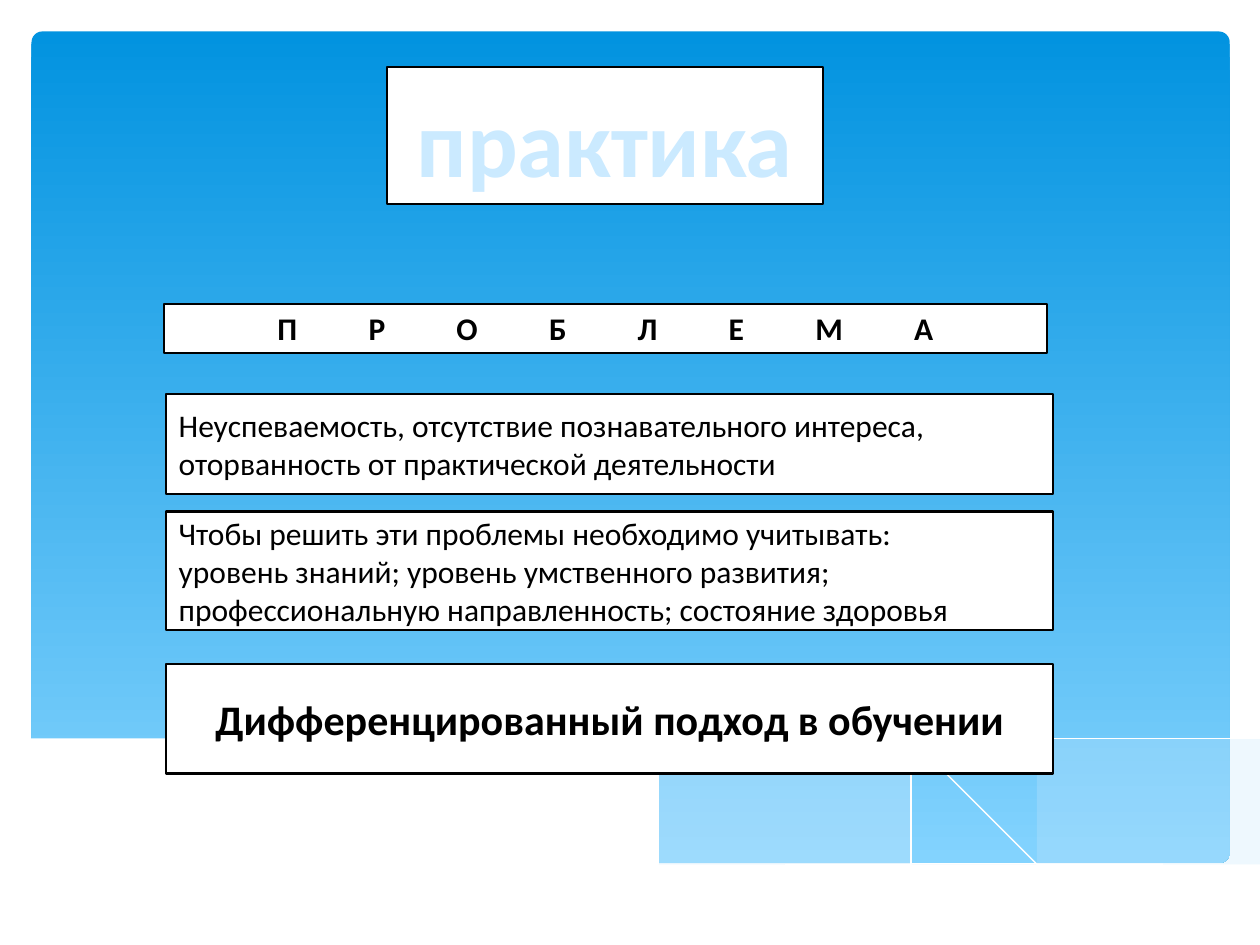
from dataclasses import dataclass

from pptx import Presentation
from pptx.dml.color import RGBColor
from pptx.enum import shapes, text
from pptx.oxml import xmlchemy
from pptx.oxml.ns import qn
from pptx.util import Inches, Pt
from lxml import etree


@dataclass(frozen=True)
class Theme:
    font: str = "Calibri"
    paper: str = "FFFFFF"
    ink: str = "000000"
    title: str = "CBEAFF"
    sky_top: str = "0293E0"
    sky_bottom: str = "83D3FE"
    swell: str = "C6E7FC"
    title_size: int = 54
    heading_size: int = 24
    body_size: int = 18
    border: float = 1.25


THEME = Theme()
CENTER = text.PP_ALIGN.CENTER
LEFT = text.PP_ALIGN.LEFT

# Knots of the curves, in inches from the corner of the wave band
RIGHT_SWELL = [
    [(9.53, .15), (8.99, .25), (8.39, .39), (7.57, .58), (6.84, .73), (6.39, .81)],
    [(6.39, .81), (6.96, .88), (7.47, .93), (7.92, .94), (8.41, .91), (8.84, .85),
     (9.14, .77), (9.54, .63)],
]
LONG_SWELL = [
    [(8.71, .89), (8.15, .81), (7.53, .70), (6.84, .56), (6.07, .38), (5.32, .21),
     (4.66, .10), (3.97, .03), (3.39, .01), (2.64, .07)],
    [(2.64, .07), (3.40, .18), (4.27, .38), (5.07, .56), (5.79, .71), (6.43, .82),
     (7.00, .90), (7.51, .93), (7.96, .94), (8.36, .93), (8.71, .89)],
]
FALLING_LINE = [(2.87, .11), (3.21, .06), (3.79, .03), (4.46, .04), (5.10, .10),
                (5.86, .20), (6.73, .35), (7.73, .57), (8.85, .87)]
RISING_LINE = [(5.91, .73), (6.50, .57), (7.26, .39), (8.14, .20), (8.74, .10),
               (9.16, .04), (9.53, .01)]
FOREGROUND = [
    [(9.54, .62), (9.17, .75), (8.76, .85), (8.27, .91), (7.86, .93), (7.21, .90),
     (6.45, .81), (5.56, .65), (4.80, .49), (3.95, .29), (3.17, .13), (2.48, .04),
     (1.70, 0), (1.09, .02), (.62, .09), (.29, .17), (0, .29)],
    [(0, 1.46), (9.54, 1.46)],
]


def rgb(value):
    return RGBColor.from_string(value)


def smooth(knots, steps=5):
    """Points of a Catmull-Rom curve through the knots."""
    padded = [knots[0], *knots, knots[-1]]
    points = [knots[0]]
    for a, b, c, d in zip(padded, padded[1:], padded[2:], padded[3:]):
        for step in range(1, steps + 1):
            t = step / steps
            points.append(tuple(
                (2 * q + (r - p) * t + (2 * p - 5 * q + 4 * r - s) * t ** 2
                 + (3 * q - p - 3 * r + s) * t ** 3) / 2
                for p, q, r, s in zip(a, b, c, d)))
    return points


def add_curve(slide, box, curves, closed=True):
    points = [point for knots in curves for point in smooth(knots)]
    builder = slide.shapes.build_freeform(*points[0], scale=Inches(1))
    builder.add_line_segments(points[1:], close=closed)
    curve = builder.convert_to_shape(Inches(box[0]), Inches(box[1]))
    curve.shadow.inherit = False
    return curve


def add_area(slide, box, curves, color, opacity=100):
    area = add_curve(slide, box, curves)
    area.fill.solid()
    area.fill.fore_color.rgb = rgb(color)
    area.line.fill.background()
    if opacity < 100:
        color_node = area.fill._xPr.find(qn("a:solidFill"))[0]
        etree.SubElement(color_node, qn("a:alpha"), val=str(opacity * 1000))


def add_sky(slide, box):
    sky = slide.shapes.add_shape(
        shapes.MSO_SHAPE.ROUNDED_RECTANGLE, *map(Inches, box))
    sky.adjustments[0] = 0.013
    sky.shadow.inherit = False
    sky.line.fill.background()
    sky.fill.gradient()
    sky.fill.gradient_angle = 270
    stops = zip(sky.fill.gradient_stops, (THEME.sky_top, THEME.sky_bottom))
    for position, (stop, color) in enumerate(stops):
        stop.position = position
        stop.color.rgb = rgb(color)


def add_waves(slide, box):
    add_area(slide, box, RIGHT_SWELL, THEME.swell, 29)
    add_area(slide, box, LONG_SWELL, THEME.swell, 40)
    for knots in (FALLING_LINE, RISING_LINE):
        thread = add_curve(slide, box, [knots], closed=False)
        thread.fill.background()
        thread.line.color.rgb = rgb(THEME.paper)
        thread.line.width = Pt(0)
    add_area(slide, box, FOREGROUND, THEME.paper)


def add_run(paragraph, wording, size, color, bold, spacing=0):
    run = paragraph.add_run()
    run.text = wording
    formats = {"name": THEME.font, "size": Pt(size), "bold": bold}
    for name, value in formats.items():
        setattr(run.font, name, value)
    run.font.color.rgb = rgb(color)
    if spacing:
        run._r.get_or_add_rPr().set("spc", str(round(spacing * 100)))


def add_panel(slide, box, lines, size=THEME.body_size, color=THEME.ink,
              bold=False, align=LEFT, spacing=0, frame_format=None):
    """White bordered box; spacing is the gap in points between letters."""
    panel = slide.shapes.add_shape(shapes.MSO_SHAPE.RECTANGLE, *map(Inches, box))
    panel.shadow.inherit = False
    panel.fill.solid()
    panel.fill.fore_color.rgb = rgb(THEME.paper)
    panel.line.color.rgb = rgb(THEME.ink)
    panel.line.width = Pt(THEME.border)
    frame = panel.text_frame
    formats = {"word_wrap": True, "vertical_anchor": text.MSO_ANCHOR.MIDDLE,
               **(frame_format or {})}
    for name, value in formats.items():
        setattr(frame, name, value)
    for index, line in enumerate(lines):
        paragraph = frame.add_paragraph() if index else frame.paragraphs[0]
        paragraph.alignment = align
        if spacing:
            add_run(paragraph, line[:-1], size, color, bold, spacing)
            line = line[-1]
        add_run(paragraph, line, size, color, bold)


def add_practice(slide):
    add_panel(slide, (3.07, 0.53, 3.46, 1.09), ["практика"],
              size=THEME.title_size, color=THEME.title, bold=True, align=CENTER,
              frame_format={"vertical_anchor": text.MSO_ANCHOR.TOP,
                            "margin_top": Inches(0.13), "margin_bottom": 0})
    add_panel(slide, (1.3, 2.41, 7.01, 0.39), ["ПРОБЛЕМА"],
              bold=True, align=CENTER, spacing=40.7)
    left, width = 1.32, 7.04
    add_panel(slide, (left, 3.13, width, 0.79), [
        "Неуспеваемость, отсутствие познавательного интереса, "
        "оторванность от практической деятельности"])
    add_panel(slide, (left, 4.06, width, 0.94), [
        "Чтобы решить эти проблемы необходимо учитывать:",
        "уровень знаний; уровень умственного развития; "
        "профессиональную направленность; состояние здоровья"])
    add_panel(slide, (left, 5.27, width, 0.87),
              ["Дифференцированный подход в обучении"],
              size=THEME.heading_size, bold=True, align=CENTER)


def main():
    deck = Presentation()
    deck.slide_width, deck.slide_height = Inches(10), Inches(7.5)
    slide = deck.slides.add_slide(deck.slide_layouts[6])
    add_sky(slide, (0.25, 0.25, 9.51, 6.6))
    add_waves(slide, (0.23, 5.86, 9.54, 1.46))
    add_practice(slide)
    deck.save("out.pptx")


if __name__ == "__main__":
    main()
